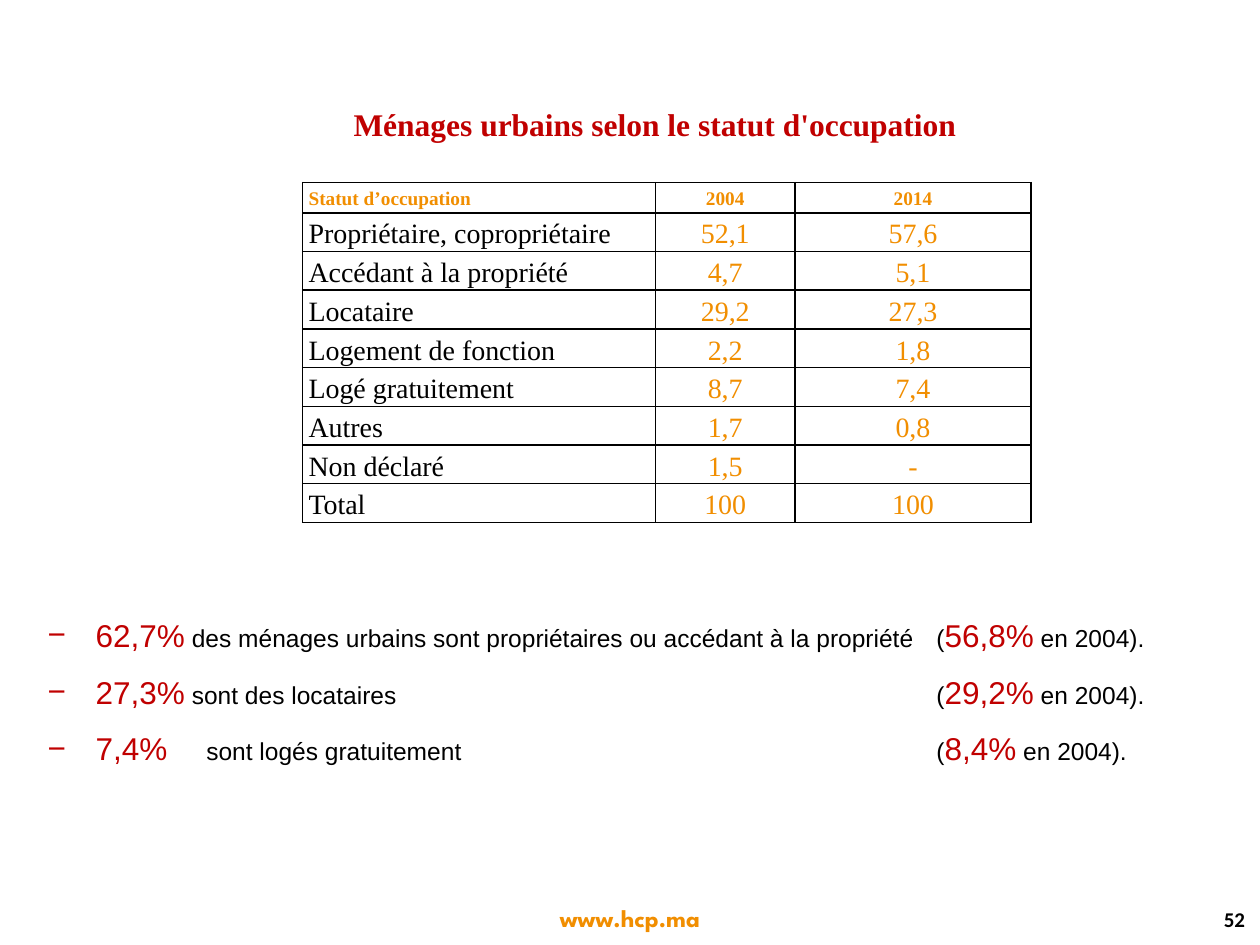
from typing import NamedTuple

from lxml.etree import SubElement
from pptx import Presentation
from pptx.dml.color import RGBColor
from pptx.enum.text import MSO_ANCHOR, PP_ALIGN
from pptx.oxml.ns import qn
from pptx.util import Cm, Pt

ORANGE = RGBColor(0xF1, 0x8E, 0x00)
RED = RGBColor(0xC0, 0x00, 0x00)
BLACK = RGBColor(0x00, 0x00, 0x00)
SERIF, SANS = "Times New Roman", "Arial"


class Box(NamedTuple):
    left: float
    top: float
    width: float
    height: float

    def lengths(self) -> list:
        return [Cm(v) for v in self]


class Style(NamedTuple):
    size: int
    font: str
    color: RGBColor
    bold: bool = False


class Finding(NamedTuple):
    share: str
    text: str
    share_2004: str


TITLE = Style(18, SERIF, RED, True)
FOOTER = Style(14, "League Spartan", ORANGE, True)
NUMBER = Style(12, "Calibri", BLACK, True)
HEAD = Style(11, SERIF, ORANGE, True)
LABEL = Style(16, SERIF, BLACK)
VALUE = Style(16, SERIF, ORANGE)
FIGURE = Style(18, SANS, RED)
BODY = Style(14, SANS, BLACK)

COL_WIDTHS = (7.11, 2.82, 4.75)
HEAD_HEIGHT, ROW_HEIGHT = 0.61, 0.78
ROWS = [
    ("Statut d’occupation", "2004", "2014"),
    ("Propriétaire, copropriétaire", "52,1", "57,6"),
    ("Accédant à la propriété", "4,7", "5,1"),
    ("Locataire", "29,2", "27,3"),
    ("Logement de fonction", "2,2", "1,8"),
    ("Logé gratuitement", "8,7", "7,4"),
    ("Autres", "1,7", "0,8"),
    ("Non déclaré", "1,5", "-"),
    ("Total", "100", "100"),
]
FINDINGS = [
    Finding("62,7%", " des ménages urbains sont propriétaires ou accédant à la propriété", "56,8%"),
    Finding("27,3%", " sont des locataires", "29,2%"),
    Finding("7,4%", "\tsont logés gratuitement", "8,4%"),
]
INDENT = 0.97
TAB_STOPS = (3.2, 17.78)


def add_run(p, text: str, style: Style) -> None:
    r = p.add_run()
    r.text = text
    r.font.size = Pt(style.size)
    r.font.name = style.font
    r.font.bold = style.bold
    r.font.color.rgb = style.color


def add_text_frame(s, box: Box):
    tf = s.shapes.add_textbox(*box.lengths()).text_frame
    tf.word_wrap = True
    return tf


def add_line(s, box: Box, text: str, style: Style, align: PP_ALIGN):
    """Add a one-paragraph text box and return its text frame."""
    tf = add_text_frame(s, box)
    p = tf.paragraphs[0]
    p.alignment = align
    add_run(p, text, style)
    return tf


def set_borders(cell) -> None:
    """Draw a thin black line on all four sides, placed before the cell fill."""
    tc_pr = cell._tc.get_or_add_tcPr()
    for i, side in enumerate(("a:lnL", "a:lnR", "a:lnT", "a:lnB")):
        ln = SubElement(tc_pr, qn(side), w=str(Pt(1)))
        fill = SubElement(ln, qn("a:solidFill"))
        SubElement(fill, qn("a:srgbClr"), val=str(BLACK))
        tc_pr.insert(i, ln)


def fill_cell(cell, text: str, style: Style, align: PP_ALIGN) -> None:
    cell.fill.background()
    set_borders(cell)
    cell.vertical_anchor = MSO_ANCHOR.MIDDLE
    cell.margin_left = cell.margin_right = Cm(0.12)
    cell.margin_top = cell.margin_bottom = 0
    p = cell.text_frame.paragraphs[0]
    p.alignment = align
    p.line_spacing = 1.15
    add_run(p, text, style)


def add_status_table(s, box: Box) -> None:
    table = s.shapes.add_table(len(ROWS), len(COL_WIDTHS), *box.lengths()).table
    table.first_row = table.horz_banding = False
    for column, width in zip(table.columns, COL_WIDTHS):
        column.width = Cm(width)
    for i, texts in enumerate(ROWS):
        table.rows[i].height = Cm(ROW_HEIGHT if i else HEAD_HEIGHT)
        for j, text in enumerate(texts):
            style = HEAD if i == 0 else VALUE if j else LABEL
            align = PP_ALIGN.CENTER if j else PP_ALIGN.LEFT
            fill_cell(table.cell(i, j), text, style, align)


def set_dash_bullet(p) -> None:
    """Give the paragraph a hanging dash and the tab stops of the findings."""
    p_pr = p._p.get_or_add_pPr()
    p_pr.set("marL", str(Cm(INDENT)))
    p_pr.set("indent", str(-Cm(INDENT)))
    SubElement(p_pr, qn("a:buFont"), typeface=SANS)
    SubElement(p_pr, qn("a:buChar"), char="−")
    tabs = SubElement(p_pr, qn("a:tabLst"))
    for stop in TAB_STOPS:
        SubElement(tabs, qn("a:tab"), pos=str(Cm(stop)), algn="l")


def add_findings(s, box: Box) -> None:
    tf = add_text_frame(s, box)
    for i, finding in enumerate(FINDINGS):
        p = tf.add_paragraph() if i else tf.paragraphs[0]
        set_dash_bullet(p)
        p.alignment = PP_ALIGN.JUSTIFY
        p.line_spacing = 1.5
        add_run(p, finding.share, FIGURE)
        add_run(p, finding.text + "\t (", BODY)
        add_run(p, finding.share_2004, FIGURE)
        add_run(p, " en 2004).", BODY)


def main() -> None:
    prs = Presentation()
    prs.slide_width, prs.slide_height = Cm(25.4), Cm(19.05)
    s = prs.slides.add_slide(prs.slide_layouts[6])

    add_line(s, Box(9.7, 18.08, 6, 0.84), "www.hcp.ma", FOOTER, PP_ALIGN.CENTER)
    number = add_line(s, Box(21.49, 18.08, 3.86, 0.89), "52", NUMBER, PP_ALIGN.RIGHT)
    number.vertical_anchor = MSO_ANCHOR.MIDDLE

    table_height = HEAD_HEIGHT + ROW_HEIGHT * (len(ROWS) - 1)
    add_status_table(s, Box(6.1, 3.68, sum(COL_WIDTHS), table_height))
    add_findings(s, Box(0.71, 11.91, 23.19, 3.71))

    title = add_line(s, Box(2.34, 1.88, 19.13, 1.09),
                     " Ménages urbains selon le statut d'occupation", TITLE, PP_ALIGN.CENTER)
    p = title.paragraphs[0]
    p._p.get_or_add_pPr().set("marL", str(Cm(2.44)))
    p.line_spacing = 1.15

    prs.save("out.pptx")


if __name__ == "__main__":
    main()
